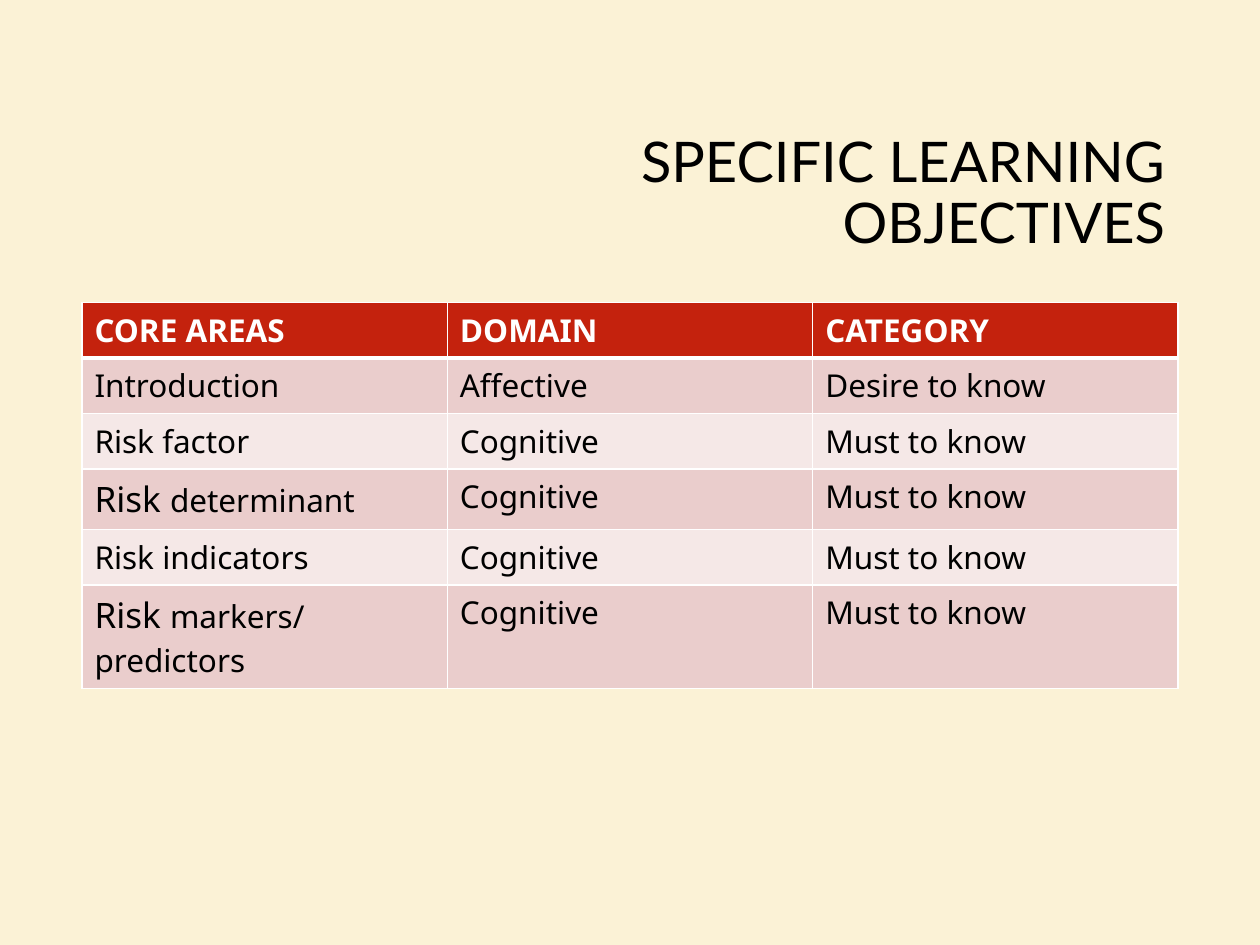
import pptx
import pptx.dml.color
import pptx.enum.text
import pptx.oxml
import pptx.oxml.ns
import pptx.util

Inches = pptx.util.Inches
Pt = pptx.util.Pt

HEADING = "SPECIFIC LEARNING OBJECTIVES"
HEADERS = ["CORE AREAS", "DOMAIN", "CATEGORY"]
OBJECTIVES = [
    [["Introduction"], ["Affective"], ["Desire to know"]],
    [["Risk factor"], ["Cognitive"], ["Must to know"]],
    [["Risk ", "determinant"], ["Cognitive"], ["Must to know"]],
    [["Risk indicators"], ["Cognitive"], ["Must to know"]],
    [["Risk ", "markers/ predictors"], ["Cognitive"], ["Must to know"]],
]
CREAM, RED, WHITE, BLACK = "FBF2D6", "C4220D", "FFFFFF", "000000"
BANDS = ["EACDCC", "F5E8E7"]
COLUMN_WIDTH, ROW_HEIGHT = 2.9, 0.41


def paint(target, color):
    target.solid()
    target.fore_color.rgb = pptx.dml.color.RGBColor.from_string(color)


def style_font(font, name, size, color, bold=False):
    font.name = name
    font.size = Pt(size)
    font.bold = bold
    paint(font.fill, color)


def add_borders(cell, widths):
    properties = cell._tc.get_or_add_tcPr()
    for side, width in zip("LRTB", widths):
        properties.append(pptx.oxml.parse_xml(
            f'<a:ln{side} {pptx.oxml.ns.nsdecls("a")} w="{Pt(width)}">'
            f'<a:solidFill><a:srgbClr val="{WHITE}"/></a:solidFill></a:ln{side}>'
        ))


def fill_cell(cell, pieces, color, background, borders, bold):
    add_borders(cell, borders)
    paint(cell.fill, background)
    paragraph = cell.text_frame.paragraphs[0]
    for index, piece in enumerate(pieces):
        run = paragraph.add_run()
        run.text = piece
        leads = index < len(pieces) - 1
        style_font(run.font, "Noto Sans", 20 if leads else 18, color, bold)


def add_heading(slide):
    heading = slide.shapes.title
    heading.left, heading.top = Inches(2.38), Inches(0.84)
    heading.width, heading.height = Inches(6.97), Inches(1.41)
    frame = heading.text_frame
    frame.text = HEADING
    frame.word_wrap = True
    frame.vertical_anchor = pptx.enum.text.MSO_ANCHOR.MIDDLE
    paragraph = frame.paragraphs[0]
    paragraph.alignment = pptx.enum.text.PP_ALIGN.RIGHT
    paragraph.line_spacing = 0.9
    style_font(paragraph.runs[0].font, "Lato", 32, BLACK)


def add_objectives(slide):
    row_count, column_count = len(OBJECTIVES) + 1, len(HEADERS)
    objectives = slide.shapes.add_table(
        row_count, column_count, Inches(0.65), Inches(2.4),
        Inches(COLUMN_WIDTH * column_count), Inches(ROW_HEIGHT * row_count),
    ).table
    for column in objectives.columns:
        column.width = Inches(COLUMN_WIDTH)
    for row in objectives.rows:
        row.height = Inches(ROW_HEIGHT)
    for column, header in enumerate(HEADERS):
        fill_cell(objectives.cell(0, column), [header], WHITE, RED, (1, 1, 1, 3), True)
    for row, objective in enumerate(OBJECTIVES):
        borders = (1, 1, 3 if row == 0 else 1, 1)
        for column, pieces in enumerate(objective):
            fill_cell(objectives.cell(row + 1, column), pieces, BLACK,
                      BANDS[row % 2], borders, False)


def main():
    deck = pptx.Presentation()
    deck.slide_width, deck.slide_height = Inches(10), Inches(7.5)
    slide = deck.slides.add_slide(deck.slide_layouts[5])
    paint(slide.background.fill, CREAM)
    add_heading(slide)
    add_objectives(slide)
    deck.save("out.pptx")


if __name__ == "__main__":
    main()
